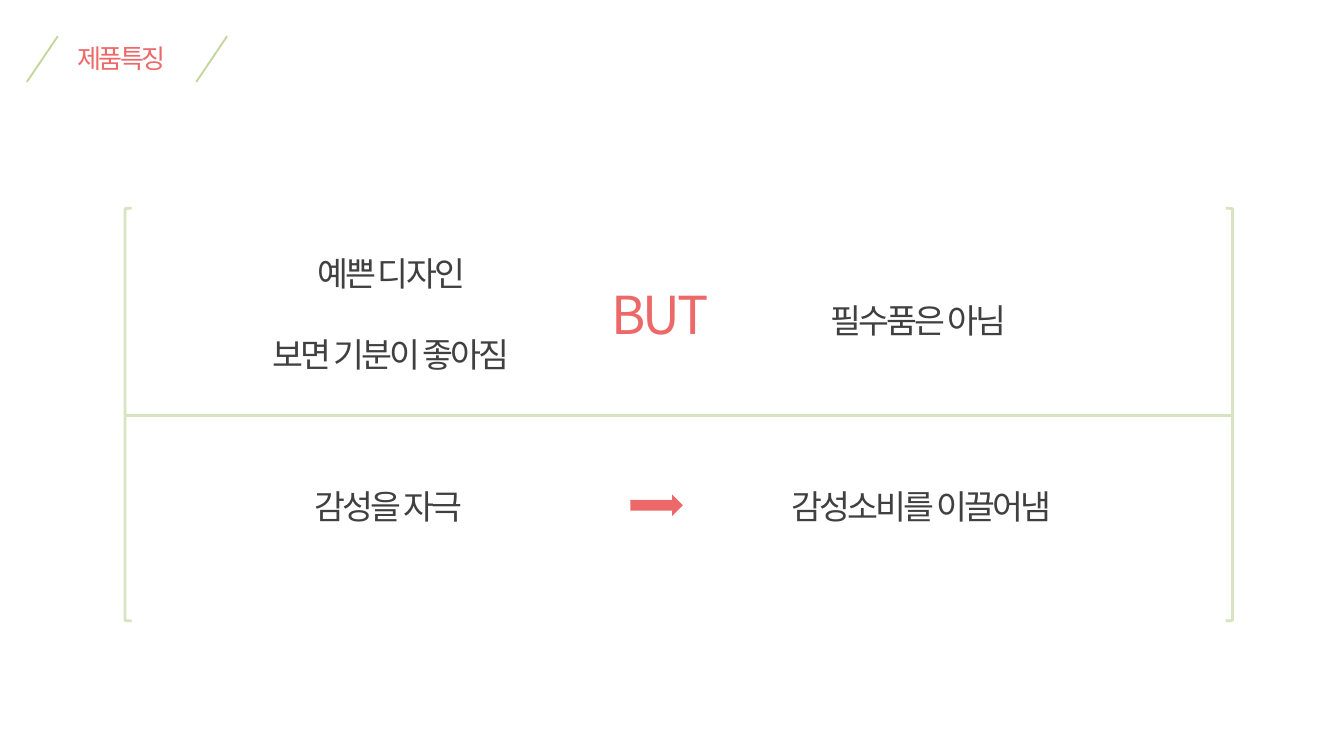
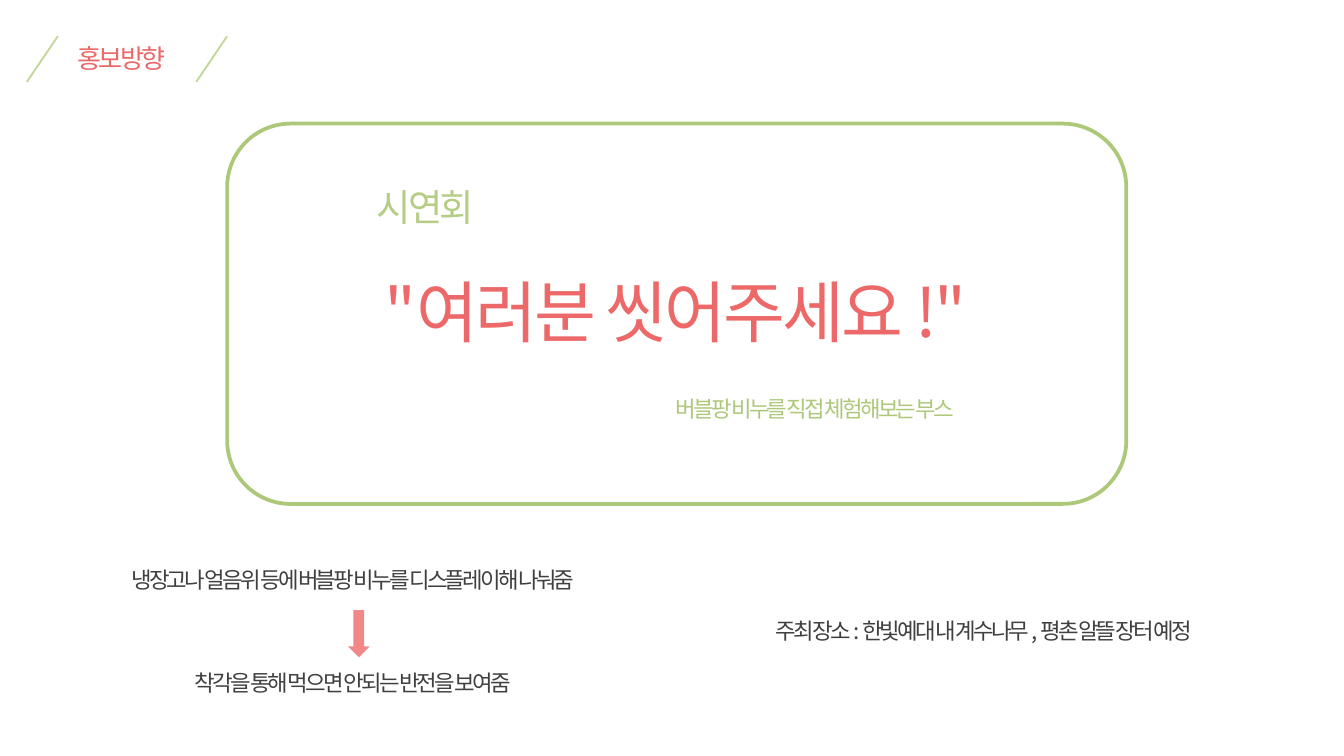
from lxml.etree import SubElement
from pptx import Presentation
from pptx.dml.color import RGBColor
from pptx.enum.shapes import MSO_CONNECTOR, MSO_SHAPE
from pptx.enum.text import MSO_AUTO_SIZE, PP_ALIGN
from pptx.oxml.ns import qn
from pptx.util import Inches, Pt

FONT = "Noto Sans CJK KR"
COLORS = {
    "white": "FFFFFF",
    "dark": "404040",
    "coral": "ED6969",
    "pink": "F18787",
    "green": "AEC87A",
    "leaf": "B5CD85",
    "slash": "C3D69B",
    "pale": "D7E4BD",
}


def color(name):
    return RGBColor.from_string(COLORS[name])


def add_text(slide, box, lines, size, tint="dark", center=False, gap=0):
    frame = slide.shapes.add_textbox(*map(Inches, box)).text_frame
    frame.word_wrap = True
    frame.auto_size = MSO_AUTO_SIZE.SHAPE_TO_FIT_TEXT
    for index, line in enumerate(lines):
        para = frame.add_paragraph() if index else frame.paragraphs[0]
        para.text = line
        para.alignment = PP_ALIGN.CENTER if center else PP_ALIGN.LEFT
        para.space_before = Pt(gap if index else 0)
        font = para.font
        font.size = Pt(size)
        font.color.rgb = color(tint)
        font.name = FONT
        props = font._element
        props.set("spc", "-150")
        SubElement(props, qn("a:ea")).set("typeface", FONT)


def add_shape(slide, kind, box, fill=None, line=None, width=1.5):
    shape = slide.shapes.add_shape(kind, *map(Inches, box))
    shape.shadow.inherit = False
    if fill:
        shape.fill.solid()
        shape.fill.fore_color.rgb = color(fill)
    else:
        shape.fill.background()
    if line:
        shape.line.color.rgb = color(line)
        shape.line.width = Pt(width)
    else:
        shape.line.fill.background()


def add_line(slide, start, end, tint, width):
    line = slide.shapes.add_connector(
        MSO_CONNECTOR.STRAIGHT, *map(Inches, start + end))
    line.line.color.rgb = color(tint)
    line.line.width = Pt(width)
    SubElement(line._element.spPr, qn("a:effectLst"))


def add_slide(deck, title):
    slide = deck.slides.add_slide(deck.slide_layouts[6])
    slide.background.fill.solid()
    slide.background.fill.fore_color.rgb = color("white")
    add_text(slide, (-0.12, 0.27, 2.05, 0.34), [title], 14, "coral", True)
    for right in (0.43, 1.69):
        add_line(slide, (right, 0.27), (right - 0.23, 0.61), "slash", 1)
    return slide


def add_traits(deck):
    slide = add_slide(deck, "제품특징")
    add_text(slide, (1.77, 1.83, 2.28, 1.31),
             ["예쁜 디자인", "보면 기분이 좋아짐"], 18, center=True, gap=22)
    for box, words in (
        ((6.08, 2.18, 2.28, 0.4), "필수품은 아님"),
        ((2.24, 3.57, 3.66, 0.4), "감성을 자극"),
        ((5.79, 3.57, 2.28, 0.4), "감성소비를 이끌어냄"),
    ):
        add_text(slide, box, [words], 18)
    add_text(slide, (4.45, 2.05, 0.94, 0.57), ["BUT"], 28, "coral")
    add_shape(slide, MSO_SHAPE.RIGHT_ARROW, (4.69, 3.68, 0.39, 0.16), "coral")
    add_line(slide, (0.93, 3.09), (9.17, 3.09), "pale", 1.5)
    for kind, left in ((MSO_SHAPE.LEFT_BRACKET, 0.93),
                       (MSO_SHAPE.RIGHT_BRACKET, 9.12)):
        add_shape(slide, kind, (left, 1.55, 0.05, 3.07), line="pale")


def add_promo(deck):
    slide = add_slide(deck, "홍보방향")
    add_shape(slide, MSO_SHAPE.ROUNDED_RECTANGLE, (1.69, 0.92, 6.69, 2.83),
              line="green", width=2)
    add_text(slide, (2.1, 1.32, 2.13, 0.44), ["시연회"], 20, "leaf", True)
    add_text(slide, (2.41, 1.96, 5.23, 0.71),
             ['"여러분 씻어주세요 !"'], 36, "coral", True)
    add_text(slide, (4.93, 2.89, 2.52, 0.3),
             ["버블팡 비누를 직접 체험해보는 부스"], 12, "green")
    for left, top, words in (
        (0.88, 4.16, "냉장고나 얼음위 등에 버블팡 비누를 디스플레이해 나눠줌"),
        (1.35, 4.93, "착각을 통해 먹으면 안되는 반전을 보여줌"),
        (5.67, 4.54, "주최 장소 : 한빛예대 내 계수나무 , 평촌 알뜰 장터 예정"),
    ):
        add_text(slide, (left, top, 3.94, 0.3), [words], 12)
    add_shape(slide, MSO_SHAPE.DOWN_ARROW, (2.59, 4.54, 0.16, 0.35), "pink")


def main():
    deck = Presentation()
    deck.slide_width = Inches(10)
    deck.slide_height = Inches(10 * 9 / 16)
    add_traits(deck)
    add_promo(deck)
    deck.save("out.pptx")


if __name__ == "__main__":
    main()
